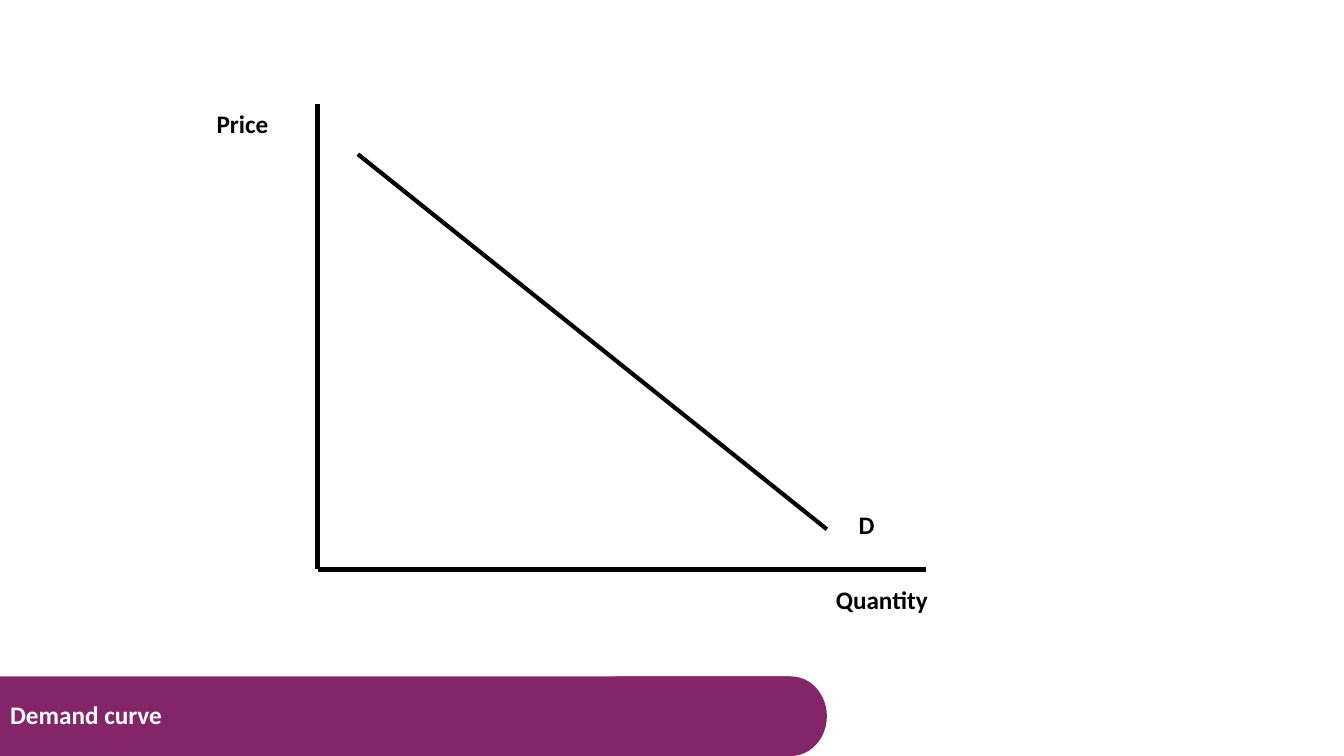
from dataclasses import dataclass

from lxml.etree import SubElement
from pptx import Presentation
from pptx.dml.color import RGBColor
from pptx.enum.shapes import MSO_CONNECTOR as Link, MSO_SHAPE as Preset
from pptx.enum.text import MSO_ANCHOR as Anchor, MSO_AUTO_SIZE as Fit, PP_ALIGN as Align
from pptx.oxml.ns import qn
from pptx.util import Inches, Pt

WIDTH, HEIGHT = Inches(13.33), Inches(7.5)
COLOURS = {"ink": "000000", "banner": "852569", "paper": "FFFFFF"}
FONT = {"name": "Calibri", "size": Pt(18), "bold": True}
LABEL_WIDTH, LABEL_HEIGHT = 9.38, 5.33
BANNER_TOP, BANNER_HEIGHT = 89.47, 10.53
ORIGIN_X, ORIGIN_Y = 23.63, 75.33
AXIS_TOP, AXIS_RIGHT = 13.73, 68.87


@dataclass(frozen=True)
class Label:
    text: str
    left: float
    top: float


@dataclass(frozen=True)
class Stroke:
    x1: float
    y1: float
    x2: float
    y2: float


@dataclass(frozen=True)
class BannerPart:
    preset: Preset
    left: float
    width: float
    rotation: int


LABELS = (
    Label("Price", 13.35, AXIS_TOP),
    Label("Quantity", 60.92, 76.67),
    Label("D", 59.79, 66.67),
)
STROKES = (
    Stroke(ORIGIN_X, AXIS_TOP, ORIGIN_X, ORIGIN_Y),
    Stroke(ORIGIN_X, ORIGIN_Y, AXIS_RIGHT, ORIGIN_Y),
    Stroke(26.63, 20.4, 61.52, 70),
)
BANNER = (
    BannerPart(Preset.RECTANGLE, 0, 58.8, 0),
    BannerPart(Preset.FLOWCHART_STORED_DATA, 45.54, 15.98, 180),
)


def across(percent: float) -> int:
    return round(WIDTH * percent / 100)


def down(percent: float) -> int:
    return round(HEIGHT * percent / 100)


def colour(name: str) -> RGBColor:
    return RGBColor.from_string(COLOURS[name])


def set_all(target, values: dict) -> None:
    for name, value in values.items():
        setattr(target, name, value)


def write(box, text: str, ink: str, frame_format: dict, para_format: dict) -> None:
    set_all(box.text_frame, frame_format)
    para = box.text_frame.paragraphs[0]
    set_all(para, para_format)
    span = para.add_run()
    span.text = text
    set_all(span.font, FONT)
    span.font.color.rgb = colour(ink)


def draw_banner_part(page, part: BannerPart) -> None:
    shape = page.shapes.add_shape(
        part.preset, across(part.left), down(BANNER_TOP), across(part.width), down(BANNER_HEIGHT)
    )
    shape.rotation = part.rotation
    shape.shadow.inherit = False
    shape.fill.solid()
    shape.fill.fore_color.rgb = colour("banner")
    shape.line.fill.background()


def draw_stroke(page, stroke: Stroke) -> None:
    line = page.shapes.add_connector(
        Link.STRAIGHT, across(stroke.x1), down(stroke.y1), across(stroke.x2), down(stroke.y2)
    )
    line.line.color.rgb = colour("ink")
    line.line.width = Pt(3)
    SubElement(line._element.spPr, qn("a:effectLst"))


def draw_label(page, label: Label) -> None:
    box = page.shapes.add_textbox(
        across(label.left), down(label.top), across(LABEL_WIDTH), down(LABEL_HEIGHT)
    )
    frame_format = {"word_wrap": True, "auto_size": Fit.SHAPE_TO_FIT_TEXT}
    write(box, label.text, "ink", frame_format, {"alignment": Align.CENTER})


def place_title(page, text: str) -> None:
    title = page.shapes.title
    place = {
        "left": 0,
        "top": down(BANNER_TOP),
        "width": across(59.04),
        "height": down(BANNER_HEIGHT),
    }
    set_all(title, place)
    frame_format = {"word_wrap": True, "auto_size": Fit.NONE, "vertical_anchor": Anchor.MIDDLE}
    write(title, text, "paper", frame_format, {"alignment": Align.LEFT, "line_spacing": 0.9})
    page.shapes._spTree.append(title._element)


def main() -> None:
    deck = Presentation()
    set_all(deck, {"slide_width": WIDTH, "slide_height": HEIGHT})
    page = deck.slides.add_slide(deck.slide_layouts.get_by_name("Title Only"))
    for part in BANNER:
        draw_banner_part(page, part)
    for stroke in STROKES:
        draw_stroke(page, stroke)
    for label in LABELS:
        draw_label(page, label)
    place_title(page, "Demand curve")
    deck.save("out.pptx")


if __name__ == "__main__":
    main()
